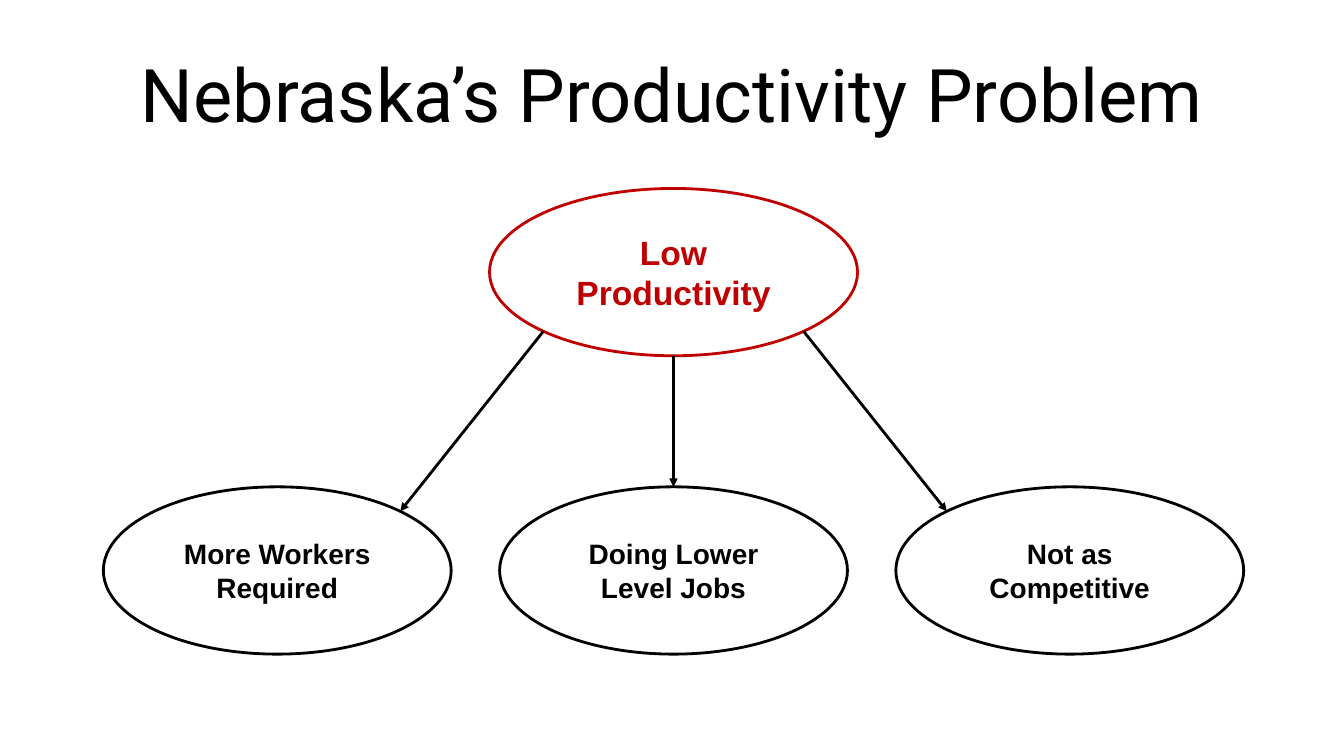
from math import sqrt

from lxml.etree import SubElement
from pptx import Presentation
from pptx.dml.color import RGBColor
from pptx.enum.shapes import MSO_CONNECTOR as Connector, MSO_SHAPE as Shape
from pptx.enum.text import MSO_ANCHOR as Anchor, PP_ALIGN as Align
from pptx.oxml.ns import qn
from pptx.util import Inches, Pt

WIDTH, HEIGHT = 13.33, 7.5
BLACK, RED, WHITE = "000000", "C00000", "FFFFFF"
MIDDLE = 6.68                      # centre of the diagram
PITCH = 3.93                       # between neighbouring effects
CAUSE_Y, EFFECT_Y = 2.7, 5.66      # centre lines of the two rows
CAUSE_WIDTH, EFFECT_WIDTH, OVAL_HEIGHT = 3.65, 3.45, 1.66
DIAGONAL = 1 / sqrt(8)             # share of an oval's size from centre to its 45° point


def write(shape, text, **formats):
    """Centre the text in the shape both ways."""
    frame = shape.text_frame
    frame.word_wrap = True
    frame.vertical_anchor = Anchor.MIDDLE
    para = frame.paragraphs[0]
    para.alignment = Align.CENTER
    span = para.add_run()
    span.text = text
    color = formats.pop("color")
    for name, value in formats.items():
        setattr(span.font, name, value)
    span.font.color.rgb = RGBColor.from_string(color)


def style_line(shape, color):
    shape.line.color.rgb = RGBColor.from_string(color)
    shape.line.width = Pt(2)


deck = Presentation()
deck.slide_width, deck.slide_height = Inches(WIDTH), Inches(HEIGHT)
page = deck.slides.add_slide(deck.slide_layouts[6])

title = page.shapes.add_textbox(
    Inches(0.05 * WIDTH), Inches(0.04 * HEIGHT), Inches(0.9 * WIDTH), Inches(1.25))
write(title, "Nebraska’s Productivity Problem", name="Roboto", size=Pt(52.8), color=BLACK)

ovals = [("Low Productivity", MIDDLE, CAUSE_Y, CAUSE_WIDTH, 24, RED)]
effects = ["More Workers Required", "Doing Lower Level Jobs", "Not as Competitive"]
for column, text in enumerate(effects, start=-1):
    ovals.append((text, MIDDLE + column * PITCH, EFFECT_Y, EFFECT_WIDTH, 20, BLACK))

for text, x, y, width, size, color in ovals:
    oval = page.shapes.add_shape(
        Shape.OVAL, Inches(x - width / 2), Inches(y - OVAL_HEIGHT / 2),
        Inches(width), Inches(OVAL_HEIGHT))
    oval.shadow.inherit = False
    oval.fill.solid()
    oval.fill.fore_color.rgb = RGBColor.from_string(WHITE)
    style_line(oval, color)
    write(oval, text, name="Arial", size=Pt(size), bold=True, color=color)

for side in (0, -1, 1):
    drop = OVAL_HEIGHT * (DIAGONAL if side else 0.5)
    start_x = MIDDLE + side * CAUSE_WIDTH * DIAGONAL
    end_x = MIDDLE + side * (PITCH - EFFECT_WIDTH * DIAGONAL)
    arrow = page.shapes.add_connector(
        Connector.STRAIGHT, Inches(start_x), Inches(CAUSE_Y + drop),
        Inches(end_x), Inches(EFFECT_Y - drop))
    style_line(arrow, BLACK)
    SubElement(arrow.line._get_or_add_ln(), qn("a:tailEnd"), type="triangle")
    SubElement(arrow._element.spPr, qn("a:effectLst"))

deck.save("out.pptx")
